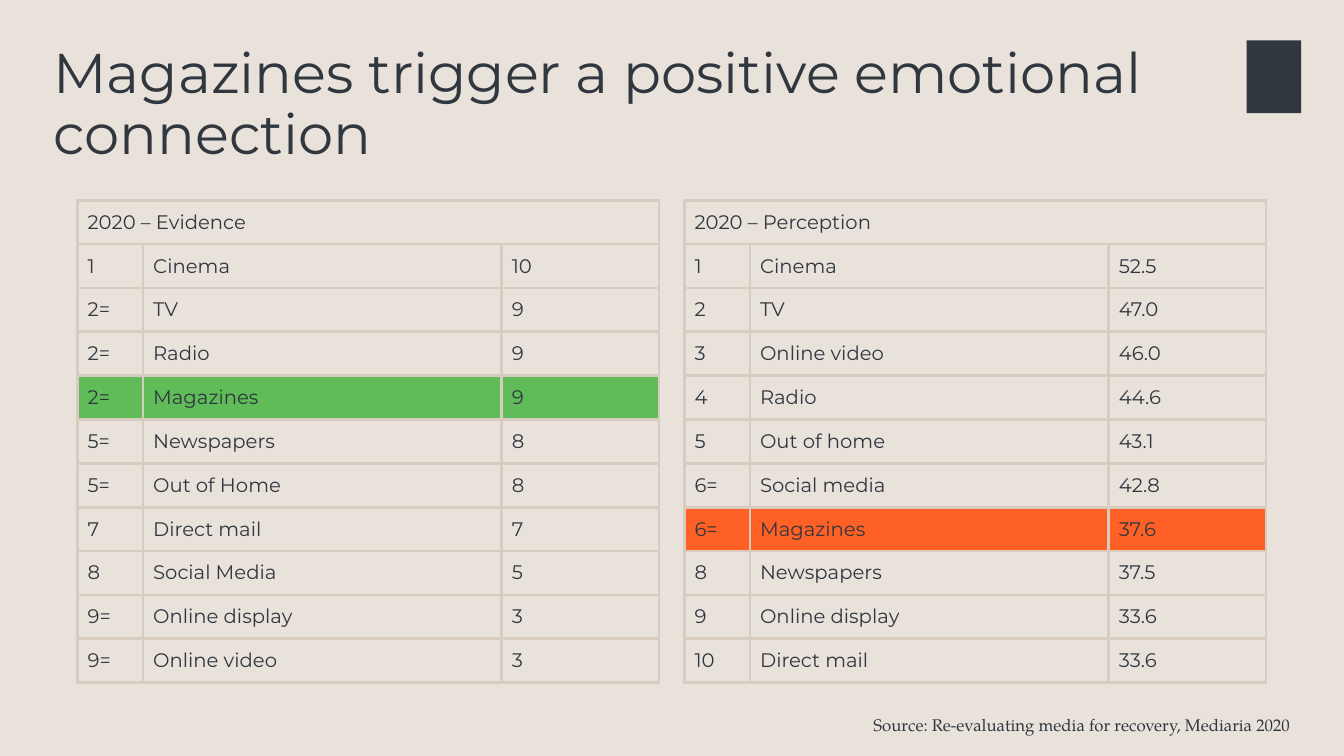
from lxml.etree import SubElement
from pptx import Presentation
from pptx.dml.color import RGBColor
from pptx.enum.shapes import MSO_SHAPE
from pptx.enum.text import MSO_ANCHOR, MSO_AUTO_SIZE, PP_ALIGN
from pptx.oxml.ns import qn
from pptx.util import Pt

INK = {"back": "E9E2DB", "text": "30373F", "line": "D8CBBF",
       "green": "5FBC59", "orange": "FF6025"}


def color(name):
    return RGBColor.from_string(INK[name])


def style(para, size, face="Montserrat"):
    para.font.size = Pt(size)
    para.font.name = face
    para.font.bold = False
    para.font.color.rgb = color("text")


deck = Presentation()
deck.slide_width, deck.slide_height = Pt(960), Pt(540)
slide = deck.slides.add_slide(deck.slide_layouts[1])
slide.background.fill.solid()
slide.background.fill.fore_color.rgb = color("back")

# Plain block in the logo's place
mark = slide.shapes.add_shape(MSO_SHAPE.RECTANGLE, Pt(890.5), Pt(28.8), Pt(39), Pt(52))
mark.shadow.inherit = False
mark.fill.solid()
mark.fill.fore_color.rgb = color("text")
mark.line.fill.background()

# Title and source line
title, source = slide.shapes.title, slide.placeholders[1]
for holder, box, words, anchor, align, size, face in [
    (title, (31, 28.8, 800.6, 104.4), "Magazines trigger a positive emotional connection",
     MSO_ANCHOR.TOP, PP_ALIGN.LEFT, 40, "Montserrat"),
    (source, (586, 504, 343, 29.5), "Source: Re-evaluating media for recovery, Mediaria 2020",
     MSO_ANCHOR.MIDDLE, PP_ALIGN.RIGHT, 12, "TeX Gyre Pagella"),
]:
    holder.left, holder.top, holder.width, holder.height = [Pt(n) for n in box]
    frame = holder.text_frame
    frame.text = words
    frame.word_wrap = True
    frame.auto_size = MSO_AUTO_SIZE.NONE
    frame.vertical_anchor = anchor
    para = frame.paragraphs[0]
    para.alignment = align
    para.line_spacing = 0.9
    style(para, size, face)

para = source.text_frame.paragraphs[0]
para.space_before = Pt(10)
props = para._p.get_or_add_pPr()
props.set("marL", "0")
props.set("indent", "0")
bullet = SubElement(props, qn("a:buNone"))

# Ranking tables: left edge, heading, highlight, rows
ranks = [
    (55.4, "2020 – Evidence", "green", [
        ("1", "Cinema", "10"), ("2=", "TV", "9"), ("2=", "Radio", "9"),
        ("2=", "Magazines", "9"), ("5=", "Newspapers", "8"),
        ("5=", "Out of Home", "8"), ("7", "Direct mail", "7"),
        ("8", "Social Media", "5"), ("9=", "Online display", "3"),
        ("9=", "Online video", "3")]),
    (488.9, "2020 – Perception", "orange", [
        ("1", "Cinema", "52.5"), ("2", "TV", "47.0"), ("3", "Online video", "46.0"),
        ("4", "Radio", "44.6"), ("5", "Out of home", "43.1"),
        ("6=", "Social media", "42.8"), ("6=", "Magazines", "37.6"),
        ("8", "Newspapers", "37.5"), ("9", "Online display", "33.6"),
        ("10", "Direct mail", "33.6")]),
]
for left, head, accent, rows in ranks:
    grid = slide.shapes.add_table(11, 3, Pt(left), Pt(143), Pt(415.4), Pt(344.85)).table
    grid.first_row = grid.horz_banding = False
    for col, width in zip(grid.columns, (46.8, 256.3, 112.3)):
        col.width = Pt(width)
    for r, row in enumerate([(head, "", "")] + rows):
        grid.rows[r].height = Pt(31.35)
        for c, words in enumerate(row):
            cell = grid.cell(r, c)
            cell.text = words
            cell.vertical_anchor = MSO_ANCHOR.MIDDLE
            style(cell.text_frame.paragraphs[0], 14)
            # Borders come before the fill in the cell's XML
            props = cell._tc.get_or_add_tcPr()
            for side in ("lnL", "lnR", "lnT", "lnB"):
                line = SubElement(props, qn(f"a:{side}"), w=str(Pt(2.25)))
                paint = SubElement(line, qn("a:solidFill"))
                SubElement(paint, qn("a:srgbClr"), val=INK["line"])
            if row[1] == "Magazines":
                cell.fill.solid()
                cell.fill.fore_color.rgb = color(accent)
            else:
                cell.fill.background()
    grid.cell(0, 0).merge(grid.cell(0, 2))

deck.save("out.pptx")
